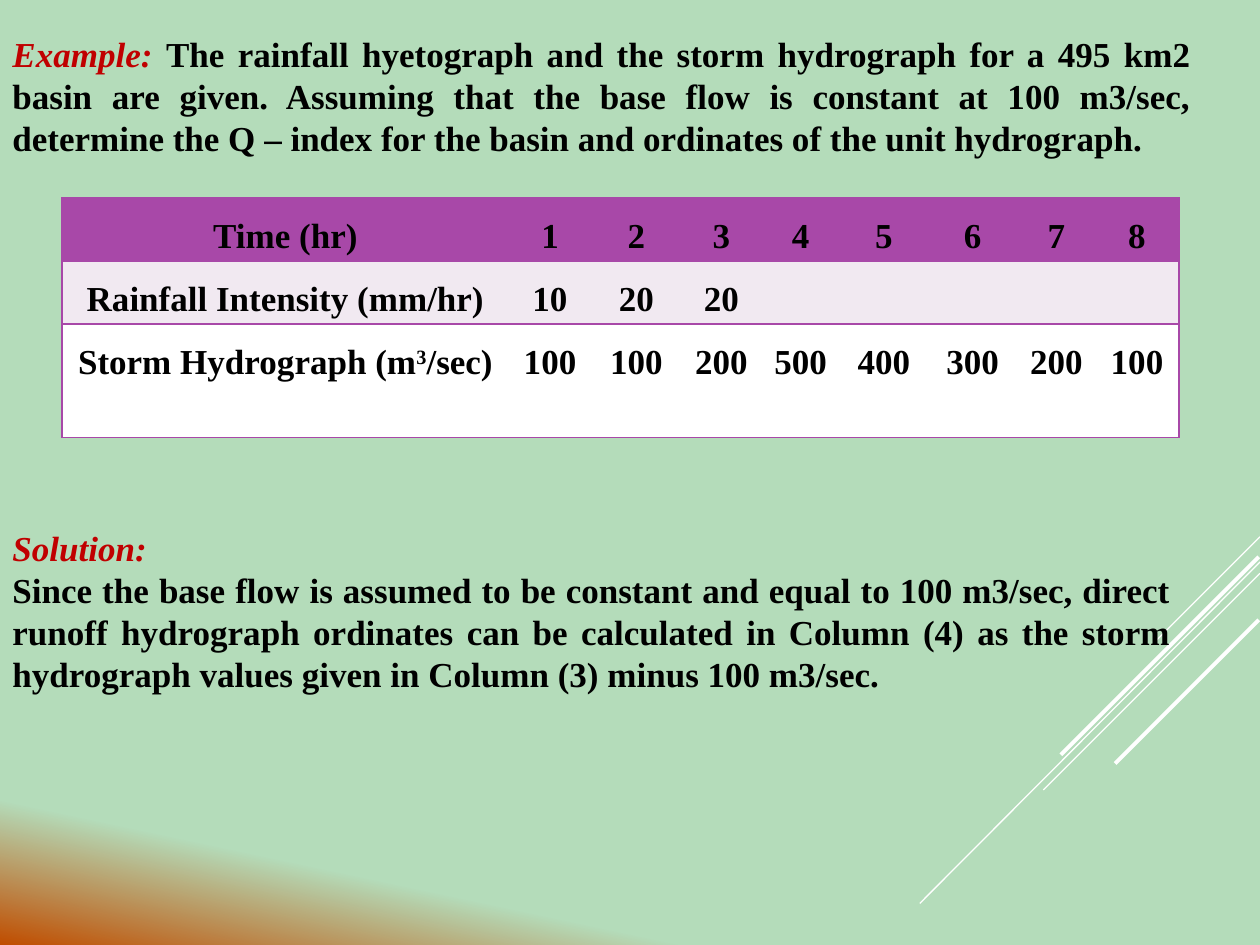
from lxml.etree import SubElement
from pptx import Presentation
from pptx.dml.color import RGBColor
from pptx.enum.shapes import MSO_CONNECTOR
from pptx.enum.text import MSO_AUTO_SIZE, PP_ALIGN
from pptx.oxml.ns import qn
from pptx.util import Inches, Pt

COLORS = {"green": "B4DCBA", "orange": "C04D00", "red": "C00000", "black": "000000",
          "white": "FFFFFF", "purple": "A848A8", "lilac": "F1E9F1"}
FONT = "Times New Roman"

# Each text block: box (left, top, width, height), then paragraphs of (text, is_heading) runs
TEXT_BLOCKS = [
    ((0, 0.21, 9.55, 1.11), [
        [("Example: ", True),
         ("The rainfall hyetograph and the storm hydrograph for a 495 km2 basin are given. "
          "Assuming that the base flow is constant at 100 m3/sec, determine the Q – index "
          "for the basin and ordinates of the unit hydrograph.", False)]]),
    ((0, 4.13, 9.39, 1.45), [
        [("Solution:", True)],
        [("Since the base flow is assumed to be constant and equal to 100 m3/sec, direct "
          "runoff hydrograph ordinates can be calculated in Column (4) as the storm "
          "hydrograph values given in Column (3) minus 100 m3/sec.", False)]]),
]

# Each row: fill, height, label runs (odd ones are superscript), hourly values
TABLE_ROWS = [
    ("purple", 0.5, ["Time (hr)"], [1, 2, 3, 4, 5, 6, 7, 8]),
    ("lilac", 0.5, ["Rainfall Intensity (mm/hr)"], [10, 20, 20] + [""] * 5),
    ("white", 0.9, ["Storm Hydrograph (m", "3", "/sec)"],
     [100, 100, 200, 500, 400, 300, 200, 100]),
]
COLUMN_WIDTHS = [3.55, 0.65, 0.72, 0.63, 0.63, 0.69, 0.72, 0.61, 0.67]
TABLE_LEFT, TABLE_TOP = 0.49, 1.57

# Diagonal accents: start x, start y, end x, end y, width in points
ACCENT_LINES = [
    (10, 4.26, 9.17, 5.09, 0.75),
    (10, 4.46, 7.3, 7.17, 0.75),
    (10, 4.55, 8.28, 6.27, 0.75),
    (9.99, 4.42, 8.42, 5.99, 2.25),
    (9.99, 4.92, 8.85, 6.06, 2.25),
]


def rgb(name):
    return RGBColor.from_string(COLORS[name])


def set_background(slide):
    fill = slide.background.fill
    fill.gradient()
    fill.gradient_angle = 258
    for stop, (position, color) in zip(fill.gradient_stops, [(0.88, "green"), (1, "orange")]):
        stop.position = position
        stop.color.rgb = rgb(color)


def add_accent_line(slide, *ends, width):
    line = slide.shapes.add_connector(MSO_CONNECTOR.STRAIGHT, *map(Inches, ends))
    line.line.color.rgb = rgb("white")
    line.line.width = Pt(width)
    SubElement(line._element.spPr, qn("a:effectLst"))


def format_paragraph(paragraph, alignment):
    paragraph.alignment = alignment
    paragraph.font.name = FONT
    paragraph.font.size = Pt(20)
    paragraph.font.bold = True


def add_text_block(slide, box, paragraphs):
    frame = slide.shapes.add_textbox(*map(Inches, box)).text_frame
    frame.word_wrap = True
    frame.auto_size = MSO_AUTO_SIZE.SHAPE_TO_FIT_TEXT
    for index, runs in enumerate(paragraphs):
        paragraph = frame.add_paragraph() if index else frame.paragraphs[0]
        format_paragraph(paragraph, PP_ALIGN.JUSTIFY)
        for text, is_heading in runs:
            run = paragraph.add_run()
            run.text = text
            run.font.italic = is_heading
            run.font.color.rgb = rgb("red" if is_heading else "black")


def set_borders(cell, visible_sides):
    """Draw the visible sides (letters of LRTB) in purple and hide the others."""
    properties = cell._tc.get_or_add_tcPr()
    for side in "LRTB":
        line = SubElement(properties, qn(f"a:ln{side}"), w=str(Pt(1)))
        if side in visible_sides:
            fill = SubElement(line, qn("a:solidFill"))
            SubElement(fill, qn("a:srgbClr"), val=COLORS["purple"])
        else:
            SubElement(line, qn("a:noFill"))


def fill_cell(cell, texts, color, visible_sides):
    set_borders(cell, visible_sides)
    cell.fill.solid()
    cell.fill.fore_color.rgb = rgb(color)
    cell.margin_left = cell.margin_right = Inches(0.07)
    cell.margin_top = cell.margin_bottom = 0
    paragraph = cell.text_frame.paragraphs[0]
    format_paragraph(paragraph, PP_ALIGN.CENTER)
    paragraph.line_spacing = 1.5
    paragraph.font.color.rgb = rgb("black")
    for index, text in enumerate(texts):
        run = paragraph.add_run()
        run.text = text
        if index % 2:
            run._r.get_or_add_rPr().set("baseline", "30000")


def add_data_table(slide):
    heights = [height for _, height, _, _ in TABLE_ROWS]
    table = slide.shapes.add_table(
        len(TABLE_ROWS), len(COLUMN_WIDTHS), Inches(TABLE_LEFT), Inches(TABLE_TOP),
        Inches(sum(COLUMN_WIDTHS)), Inches(sum(heights))).table
    table.first_row = table.horz_banding = False
    for column, width in zip(table.columns, COLUMN_WIDTHS):
        column.width = Inches(width)
    last = len(COLUMN_WIDTHS) - 1
    for row, (color, height, label, values) in zip(table.rows, TABLE_ROWS):
        row.height = Inches(height)
        contents = [label] + [[str(value)] if value != "" else [] for value in values]
        for index, (cell, texts) in enumerate(zip(row.cells, contents)):
            sides = "TB" + ("L" if index == 0 else "R" if index == last else "")
            fill_cell(cell, texts, color, sides)


def main():
    presentation = Presentation()
    presentation.slide_width, presentation.slide_height = Inches(10), Inches(7.5)
    slide = presentation.slides.add_slide(presentation.slide_layouts[6])
    set_background(slide)
    for *ends, width in ACCENT_LINES:
        add_accent_line(slide, *ends, width=width)
    example, solution = TEXT_BLOCKS
    add_text_block(slide, *example)
    add_data_table(slide)
    add_text_block(slide, *solution)
    presentation.save("out.pptx")


if __name__ == "__main__":
    main()
